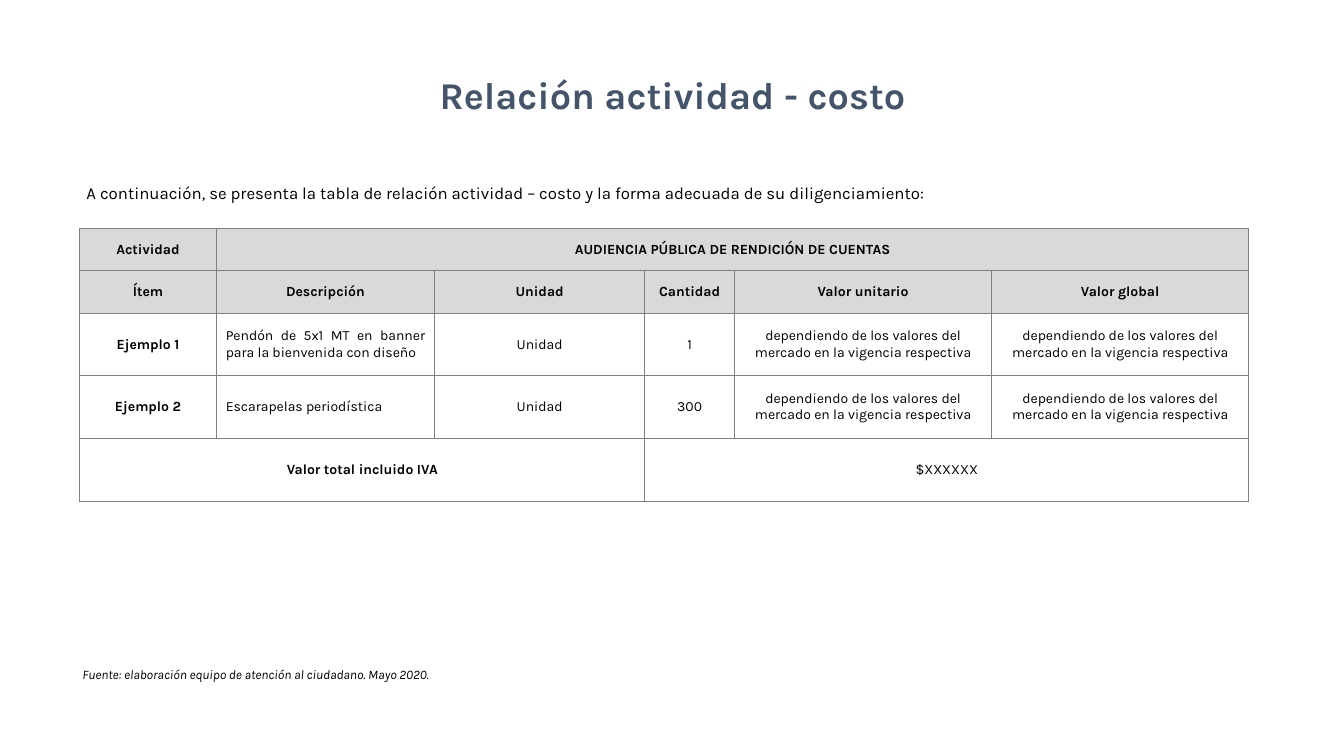
import pptx
import pptx.util
import pptx.dml.color
import pptx.enum.text
import lxml.etree
from dataclasses import dataclass
from pptx.util import Cm

ALIGN = pptx.enum.text.PP_ALIGN
ANCHOR = pptx.enum.text.MSO_ANCHOR


@dataclass(frozen=True)
class Theme:
    font: str = "Karla"
    title_color: str = "44546A"
    text_color: str = "000000"
    header_fill: str = "D9D9D9"
    body_fill: str = "FFFFFF"
    border: str = "808080"
    title_size: float = 27
    intro_size: float = 12
    table_size: float = 10
    source_size: float = 9.3


theme = Theme()


def write(text_frame, text, size, color=theme.text_color, align=ALIGN.CENTER,
          bold=False, italic=False, spacing=None):
    text_frame.word_wrap = True
    text_frame.text = text
    paragraph = text_frame.paragraphs[0]
    paragraph.alignment = align
    if spacing:
        paragraph.line_spacing = spacing
    font = paragraph.runs[0].font
    font.name, font.size = theme.font, pptx.util.Pt(size)
    font.bold, font.italic = bold, italic
    font.color.rgb = pptx.dml.color.RGBColor.from_string(color)


def format_cell(cell, fill):
    cell.vertical_anchor = ANCHOR.MIDDLE
    cell.margin_left = cell.margin_right = Cm(0.24)
    cell.margin_top = cell.margin_bottom = Cm(0.12)
    # Borders come before the fill in the cell properties
    properties = cell._tc.get_or_add_tcPr()
    for side in ("lnL", "lnR", "lnT", "lnB"):
        line = lxml.etree.SubElement(properties, pptx.oxml.ns.qn(f"a:{side}"),
                                     w=str(pptx.util.Pt(0.75)))
        solid = lxml.etree.SubElement(line, pptx.oxml.ns.qn("a:solidFill"))
        lxml.etree.SubElement(solid, pptx.oxml.ns.qn("a:srgbClr"), val=theme.border)
    cell.fill.solid()
    cell.fill.fore_color.rgb = pptx.dml.color.RGBColor.from_string(fill)


presentation = pptx.Presentation()
presentation.slide_width = Cm(33.87)
presentation.slide_height = Cm(19.05)
slide = presentation.slides.add_slide(presentation.slide_layouts[5])

# Title
title = slide.shapes.title
title.left, title.top, title.width, title.height = Cm(8.74), Cm(1.65), Cm(16.41), Cm(1.45)
title.text_frame.auto_size = pptx.enum.text.MSO_AUTO_SIZE.NONE
title.text_frame.vertical_anchor = ANCHOR.BOTTOM
write(title.text_frame, "Relación actividad - costo", theme.title_size,
      theme.title_color, bold=True, spacing=0.9)

# Activity and cost table
VALUE_NOTE = "dependiendo de los valores del mercado en la vigencia respectiva"
rows = [
    ["Actividad", "AUDIENCIA PÚBLICA DE RENDICIÓN DE CUENTAS", "", "", "", ""],
    ["Ítem", "Descripción", "Unidad", "Cantidad", "Valor unitario", "Valor global"],
    ["Ejemplo 1", "Pendón de 5x1 MT en banner para la bienvenida con diseño",
     "Unidad", "1", VALUE_NOTE, VALUE_NOTE],
    ["Ejemplo 2", "Escarapelas periodística", "Unidad", "300", VALUE_NOTE, VALUE_NOTE],
    ["Valor total incluido IVA", "", "", "$XXXXXX", "", ""],
]
column_widths = [3.44, 5.5, 5.3, 2.26, 6.48, 6.48]
row_heights = [1.07, 1.07, 1.58, 1.58, 1.58]
HEADER_ROWS = 2

table = slide.shapes.add_table(len(rows), len(column_widths), Cm(2.01), Cm(5.75),
                               Cm(sum(column_widths)), Cm(sum(row_heights))).table
for column, width in zip(table.columns, column_widths):
    column.width = Cm(width)
for row, height in zip(table.rows, row_heights):
    row.height = Cm(height)

for row_index, values in enumerate(rows):
    is_header = row_index < HEADER_ROWS
    for column_index, value in enumerate(values):
        cell = table.cell(row_index, column_index)
        format_cell(cell, theme.header_fill if is_header else theme.body_fill)
        if value:
            is_description = column_index == 1 and not is_header
            write(cell.text_frame, value, theme.table_size,
                  align=ALIGN.JUSTIFY if is_description else ALIGN.CENTER,
                  bold=is_header or column_index == 0)

# Merged cells: activity name, total label and total value
for row_index, first, last in [(0, 1, 5), (4, 0, 2), (4, 3, 5)]:
    table.cell(row_index, first).merge(table.cell(row_index, last))

# Source note and introduction
source_note = slide.shapes.add_textbox(Cm(1.83), Cm(16.71), Cm(10.69), Cm(0.94))
write(source_note.text_frame,
      "Fuente: elaboración equipo de atención al ciudadano. Mayo 2020.",
      theme.source_size, align=ALIGN.JUSTIFY, italic=True, spacing=0.9)

introduction = slide.shapes.add_textbox(Cm(1.93), Cm(4.42), Cm(29.59), Cm(0.94))
write(introduction.text_frame,
      "A continuación, se presenta la tabla de relación actividad – costo "
      "y la forma adecuada de su diligenciamiento:",
      theme.intro_size, align=ALIGN.JUSTIFY, spacing=1.1)

presentation.save("out.pptx")
